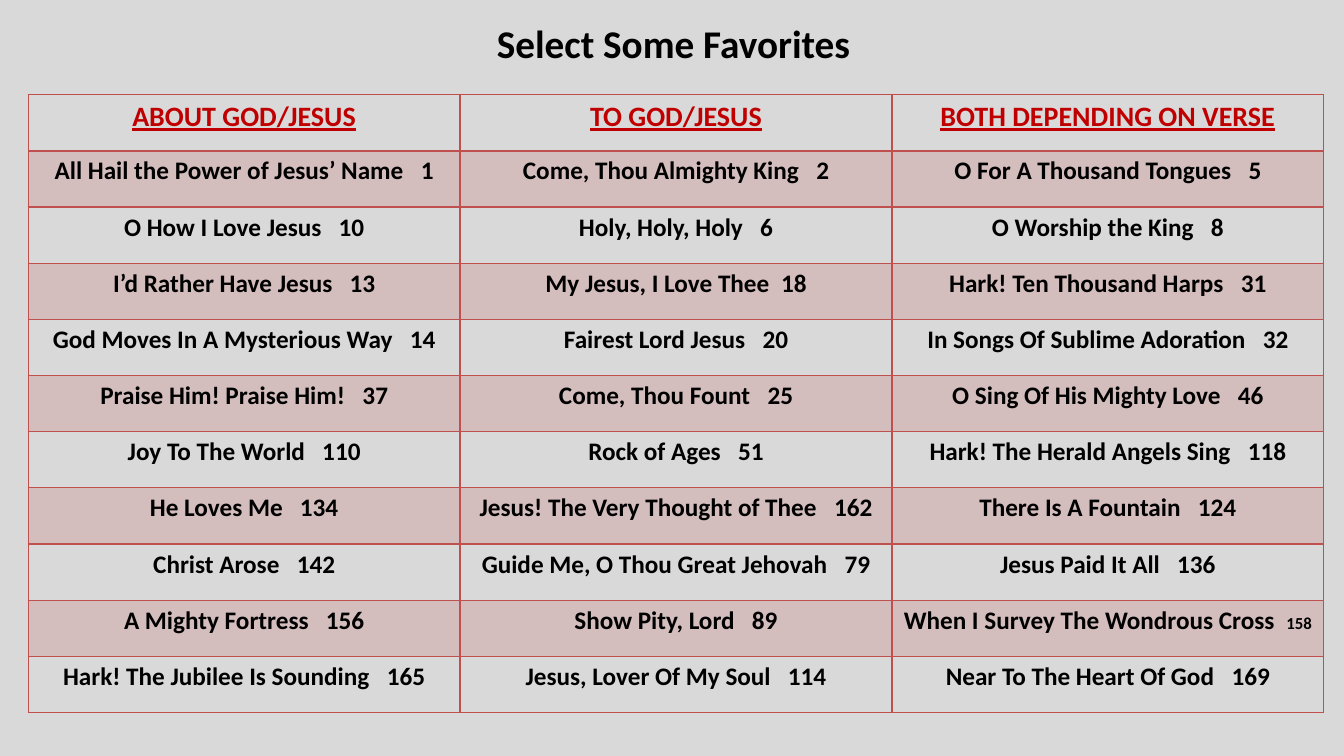
from dataclasses import dataclass

from lxml.etree import SubElement
from pptx import Presentation
from pptx.dml.color import RGBColor
from pptx.enum.text import MSO_AUTO_SIZE, PP_ALIGN
from pptx.oxml.ns import qn
from pptx.slide import Slide
from pptx.table import _Cell
from pptx.text.text import _Paragraph
from pptx.util import Inches, Pt

FONT = "Calibri"
BLACK = "000000"
HEADING_RED = "C00000"
ACCENT = "C0504D"
BACKGROUND = "D9D9D9"
BAND_OPACITY = 20
SPACE_WIDTH = 0.226


@dataclass(frozen=True)
class Hymn:
    title: str
    number: int
    number_size: float = 18
    gap_spaces: int = 3


@dataclass(frozen=True)
class HymnColumn:
    heading: str
    hymns: tuple[Hymn, ...]


COLUMNS = (
    HymnColumn("ABOUT GOD/JESUS", (
        Hymn("All Hail the Power of Jesus’ Name", 1),
        Hymn("O How I Love Jesus", 10),
        Hymn("I’d Rather Have Jesus", 13),
        Hymn("God Moves In A Mysterious Way", 14),
        Hymn("Praise Him! Praise Him!", 37),
        Hymn("Joy To The World", 110),
        Hymn("He Loves Me", 134),
        Hymn("Christ Arose", 142),
        Hymn("A Mighty Fortress", 156),
        Hymn("Hark! The Jubilee Is Sounding", 165),
    )),
    HymnColumn("TO GOD/JESUS", (
        Hymn("Come, Thou Almighty King", 2),
        Hymn("Holy, Holy, Holy", 6),
        Hymn("My Jesus, I Love Thee", 18, gap_spaces=2),
        Hymn("Fairest Lord Jesus", 20),
        Hymn("Come, Thou Fount", 25),
        Hymn("Rock of Ages", 51),
        Hymn("Jesus! The Very Thought of Thee", 162),
        Hymn("Guide Me, O Thou Great Jehovah", 79),
        Hymn("Show Pity, Lord", 89),
        Hymn("Jesus, Lover Of My Soul", 114),
    )),
    HymnColumn("BOTH DEPENDING ON VERSE", (
        Hymn("O For A Thousand Tongues", 5),
        Hymn("O Worship the King", 8),
        Hymn("Hark! Ten Thousand Harps", 31),
        Hymn("In Songs Of Sublime Adoration", 32),
        Hymn("O Sing Of His Mighty Love", 46),
        Hymn("Hark! The Herald Angels Sing", 118),
        Hymn("There Is A Fountain", 124),
        Hymn("Jesus Paid It All", 136),
        Hymn("When I Survey The Wondrous Cross", 158, number_size=12, gap_spaces=2),
        Hymn("Near To The Heart Of God", 169),
    )),
)


def color(value: str) -> RGBColor:
    return RGBColor.from_string(value)


def add_text(para: _Paragraph, text: str, *, size: float = 18, fill: str = BLACK,
             underline: bool = False, spacing: float = 0) -> None:
    span = para.add_run()
    span.text = text
    font = span.font
    font.name = FONT
    font.size = Pt(size)
    font.bold = True
    font.underline = underline
    font.color.rgb = color(fill)
    if spacing:
        span._r.get_or_add_rPr().set("spc", str(round(spacing * 100)))


def add_hymn(para: _Paragraph, hymn: Hymn) -> None:
    add_text(para, hymn.title)
    add_text(para, " ", spacing=(hymn.gap_spaces - 1) * SPACE_WIDTH * 18)
    add_text(para, str(hymn.number), size=hymn.number_size)


def set_borders(cell: _Cell, top: float, bottom: float) -> None:
    properties = cell._tc.get_or_add_tcPr()
    for side, width in (("L", 1), ("R", 1), ("T", top), ("B", bottom)):
        line = SubElement(properties, qn(f"a:ln{side}"), w=str(Pt(width)))
        fill = SubElement(line, qn("a:solidFill"))
        SubElement(fill, qn("a:srgbClr"), val=ACCENT)


def set_band(cell: _Cell, banded: bool) -> None:
    if not banded:
        cell.fill.background()
        return
    cell.fill.solid()
    cell.fill.fore_color.rgb = color(ACCENT)
    tint = cell._tc.tcPr.find(qn("a:solidFill")).find(qn("a:srgbClr"))
    SubElement(tint, qn("a:alpha"), val=str(BAND_OPACITY * 1000))


def add_title(page: Slide) -> None:
    box = page.shapes.add_textbox(Inches(4.83), Inches(0.14), Inches(3.75), Inches(0.57))
    box.text_frame.word_wrap = False
    box.text_frame.auto_size = MSO_AUTO_SIZE.SHAPE_TO_FIT_TEXT
    add_text(box.text_frame.paragraphs[0], "Select Some Favorites", size=28)


def add_hymn_table(page: Slide) -> None:
    row_count = len(COLUMNS[0].hymns) + 1
    table = page.shapes.add_table(row_count, len(COLUMNS), Inches(0.28), Inches(0.94),
                                  Inches(12.85), Inches(6.13)).table
    table.first_row = False
    table.horz_banding = False
    for column_index, column in enumerate(COLUMNS):
        for row_index in range(row_count):
            cell = table.cell(row_index, column_index)
            set_borders(cell, top=2 if row_index == 1 else 1,
                        bottom=2 if row_index == 0 else 1)
            set_band(cell, row_index % 2 == 1)
            para = cell.text_frame.paragraphs[0]
            para.alignment = PP_ALIGN.CENTER
            if row_index == 0:
                add_text(para, column.heading, size=20, fill=HEADING_RED, underline=True)
            else:
                add_hymn(para, column.hymns[row_index - 1])


def main() -> None:
    deck = Presentation()
    deck.slide_width = Inches(13.33)
    deck.slide_height = Inches(7.5)
    page = deck.slides.add_slide(deck.slide_layouts[6])
    page.background.fill.solid()
    page.background.fill.fore_color.rgb = color(BACKGROUND)
    add_hymn_table(page)
    add_title(page)
    deck.save("out.pptx")


if __name__ == "__main__":
    main()
